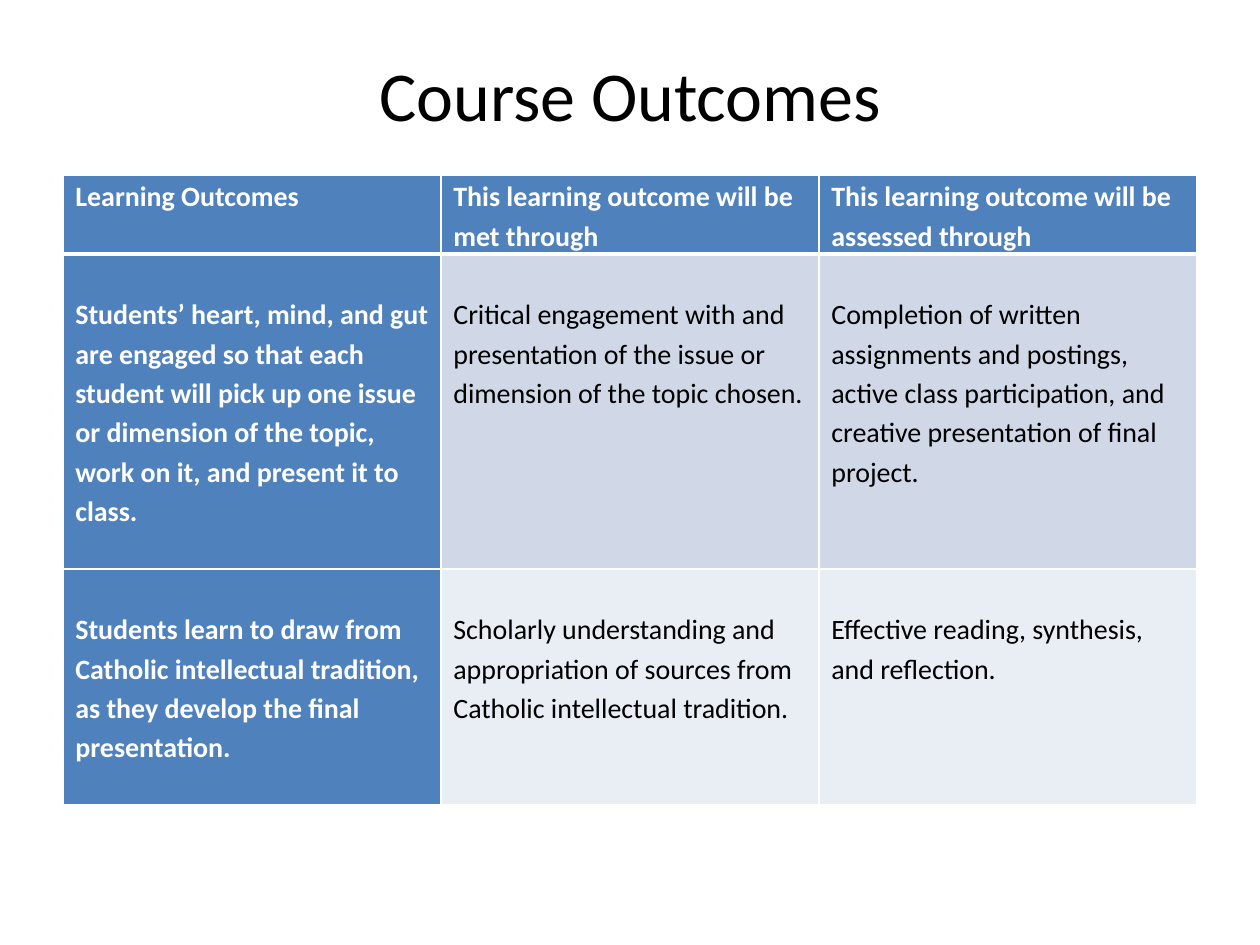
from lxml import etree
from pptx import Presentation
from pptx import util as u
from pptx.dml.color import RGBColor
from pptx.enum import text
from pptx.oxml.ns import qn

BLUE, WHITE, BLACK = "4F81BD", "FFFFFF", "000000"
BAND_FILLS = ["D0D8E8", "E9EDF4"]
ROW_HEIGHTS = [1.59, 6.35, 4.76]
COLUMN_WIDTH = 7.62
LINE_GAP = 0.79

OUTCOMES = [
    ["Learning Outcomes",
     "This learning outcome will be met through",
     "This learning outcome will be assessed through"],
    ["Students’ heart, mind, and gut are engaged so that each student will pick up "
     "one issue or dimension of the topic, work on it, and present it to class.",
     "Critical engagement with and presentation of the issue or dimension of the topic chosen.",
     "Completion of written assignments and postings, active class participation, "
     "and creative presentation of final project."],
    ["Students learn to draw from Catholic intellectual tradition, as they develop "
     "the final presentation.",
     "Scholarly understanding and appropriation of sources from Catholic intellectual tradition.",
     "Effective reading, synthesis, and reflection."],
]


def color(value):
    return RGBColor.from_string(value)


def add_run(paragraph, wording, size, ink, bold=False):
    run = paragraph.add_run()
    run.text = wording
    run.font.name = "Calibri"
    run.font.size = u.Pt(size)
    run.font.bold = bold
    run.font.color.rgb = color(ink)


def add_title(slide, wording):
    title = slide.shapes.title
    title.left, title.top = u.Cm(1.27), u.Cm(0.3)
    title.width, title.height = u.Cm(22.86), u.Cm(3.18)
    frame = title.text_frame
    frame.vertical_anchor = text.MSO_ANCHOR.MIDDLE
    heading = frame.paragraphs[0]
    heading.alignment = text.PP_ALIGN.CENTER
    add_run(heading, wording, 40, BLACK)


def set_borders(cell, widths):
    properties = cell._tc.get_or_add_tcPr()
    for side, width in widths.items():
        line = etree.SubElement(properties, qn(f"a:ln{side}"), w=str(u.Pt(width)))
        fill = etree.SubElement(line, qn("a:solidFill"))
        etree.SubElement(fill, qn("a:srgbClr"), val=WHITE)


def fill_cell(cell, wording, row, column):
    is_header = row == 0
    is_label = is_header or column == 0
    cell.margin_left = cell.margin_right = u.Cm(0.25)
    cell.margin_top = cell.margin_bottom = u.Cm(0 if is_header else LINE_GAP)
    cell.vertical_anchor = text.MSO_ANCHOR.TOP
    set_borders(cell, {"L": 1, "R": 1,
                       "T": 3 if row == 1 else 1,
                       "B": 3 if is_header else 1})
    cell.fill.solid()
    cell.fill.fore_color.rgb = color(BLUE if is_label else BAND_FILLS[row - 1])
    paragraph = cell.text_frame.paragraphs[0]
    paragraph.line_spacing = 1.15
    add_run(paragraph, wording, 16, WHITE if is_label else BLACK, is_label)


def add_outcomes_table(slide):
    columns = len(OUTCOMES[0])
    table = slide.shapes.add_table(
        len(OUTCOMES), columns, u.Cm(1.27), u.Cm(3.53),
        u.Cm(COLUMN_WIDTH * columns), u.Cm(sum(ROW_HEIGHTS))).table
    table.first_col = True
    for column in table.columns:
        column.width = u.Cm(COLUMN_WIDTH)
    for row, (height, wordings) in enumerate(zip(ROW_HEIGHTS, OUTCOMES)):
        table.rows[row].height = u.Cm(height)
        for column, wording in enumerate(wordings):
            fill_cell(table.cell(row, column), wording, row, column)


def main():
    deck = Presentation()
    deck.slide_width, deck.slide_height = u.Cm(25.4), u.Cm(19.05)
    slide = deck.slides.add_slide(deck.slide_layouts[5])
    add_title(slide, "Course Outcomes")
    add_outcomes_table(slide)
    deck.save("out.pptx")


if __name__ == "__main__":
    main()
